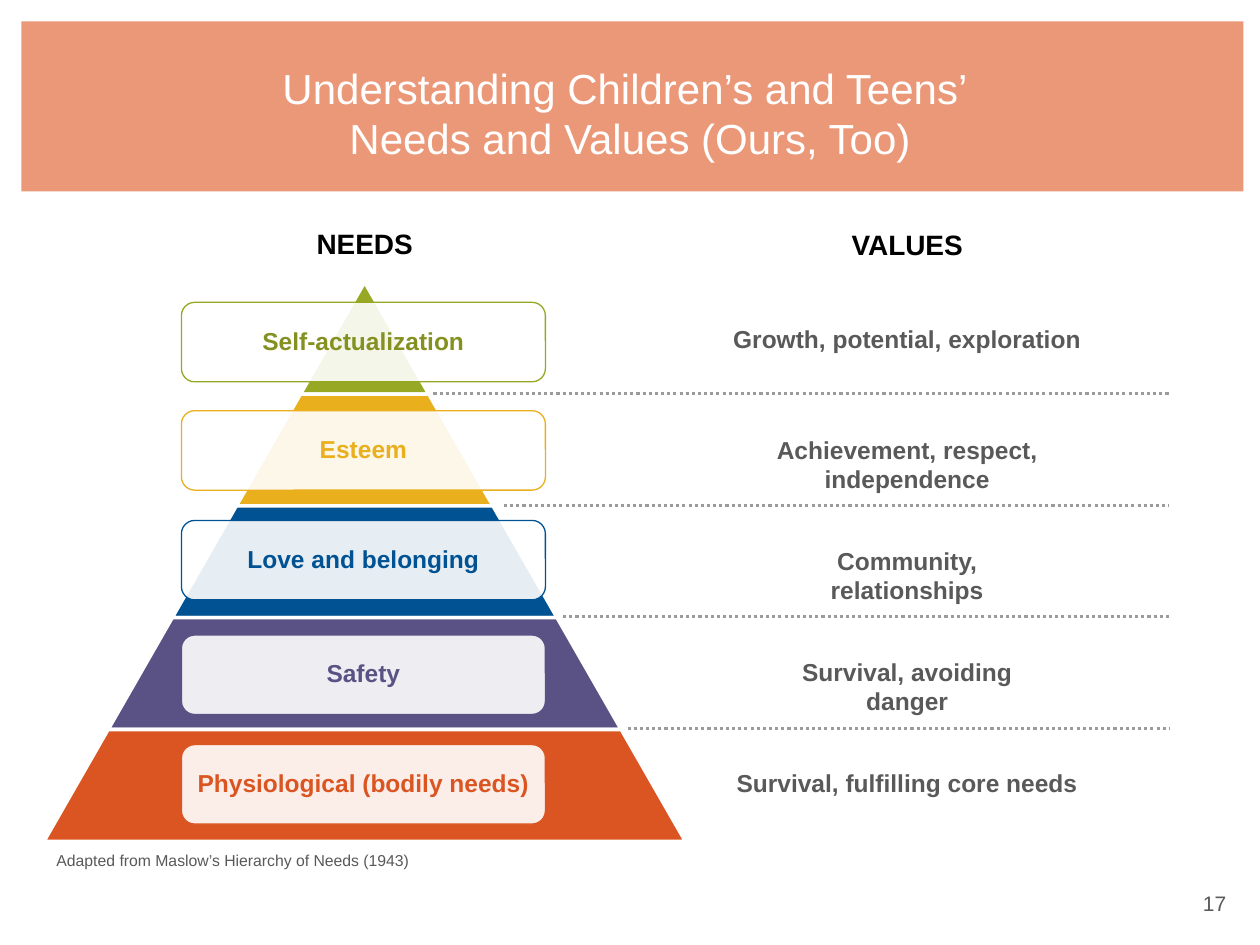
from dataclasses import dataclass

from lxml import etree
from pptx import Presentation
from pptx.dml.color import RGBColor
from pptx.enum import dml, shapes, text
from pptx.oxml import ns
from pptx.util import Pt


@dataclass(frozen=True)
class Theme:
    font: str = "Arial"
    band: str = "EB9878"
    white: str = "FFFFFF"
    black: str = "000000"
    gray: str = "595959"
    rule: str = "9B9B9B"
    title_size: float = 24
    heading_size: float = 16
    body_size: float = 14
    number_size: float = 12
    source_size: float = 9


@dataclass(frozen=True)
class Tier:
    need: str
    value: str
    value_width: float
    label_top: float
    rule_left: float
    fill: str
    outline: str
    ink: str


THEME = Theme()
CENTER = 208.4
VALUE_CENTER = 518.4
PYRAMID_TOP = 161.3
TIER_HEIGHT = 63.9
TIER_WIDTH = 73.3
VALUE_TOP = 181.4
VALUE_PITCH = 63.5
RULE_RIGHT = 668.2

TIERS = [
    Tier("Self-actualization", "Growth, potential, exploration", 216, 172.8, 247.7,
         "97A825", "96A721", "849120"),
    Tier("Esteem", "Achievement, respect, independence", 245, 234.7, 288,
         "E9AF1D", "E9AF1D", "E9AF1D"),
    Tier("Love and belonging", "Community, relationships", 180, 297.4, 321.8,
         "005293", "005293", "005293"),
    Tier("Safety", "Survival, avoiding danger", 180, 362.9, 358.6,
         "5A5284", "5A5284", "5A5284"),
    Tier("Physiological (bodily needs)", "Survival, fulfilling core needs", 216, 425.5, None,
         "DA5521", "DA5521", "DA5521"),
]


class SlideBuilder:
    def __init__(self, deck, theme):
        self.theme = theme
        self.page = deck.slides.add_slide(deck.slide_layouts[5])

    def set_text(self, shape, words, size, color, bold=False, align=text.PP_ALIGN.CENTER):
        frame = shape.text_frame
        frame.word_wrap = True
        frame.text = words
        para = frame.paragraphs[0]
        para.alignment = align
        para.font.name = self.theme.font
        para.font.size = Pt(size)
        para.font.bold = bold
        para.font.color.rgb = RGBColor.from_string(color)
        return frame

    def shape(self, kind, left, top, width, height, fill, outline=None, weight=0):
        shape = self.page.shapes.add_shape(kind, Pt(left), Pt(top), Pt(width), Pt(height))
        shape.shadow.inherit = False
        shape.fill.solid()
        shape.fill.fore_color.rgb = RGBColor.from_string(fill)
        if outline:
            shape.line.color.rgb = RGBColor.from_string(outline)
            shape.line.width = Pt(weight)
        else:
            shape.line.fill.background()
        return shape

    def title(self, words):
        title = self.page.shapes.title
        title.left, title.top, title.width, title.height = Pt(36), Pt(29), Pt(648), Pt(70.6)
        frame = self.set_text(title, words, self.theme.title_size, self.theme.white)
        frame.vertical_anchor = text.MSO_ANCHOR.MIDDLE
        band = self.shape(shapes.MSO_SHAPE.RECTANGLE, 12.2, 12.2, 698.4, 97.2, self.theme.band)
        title.element.addprevious(band.element)

    def text_box(self, words, left, top, width, height, size, color, **style):
        box = self.page.shapes.add_textbox(Pt(left), Pt(top), Pt(width), Pt(height))
        self.set_text(box, words, size, color, **style)

    def heading(self, words, center, top, width):
        self.text_box(words, center - width / 2, top, width, 26.6,
                      self.theme.heading_size, self.theme.black, bold=True)

    def pyramid_tier(self, index, tier):
        width = TIER_WIDTH * (index + 1)
        shape = self.shape(shapes.MSO_SHAPE.TRAPEZOID, CENTER - width / 2,
                           PYRAMID_TOP + index * TIER_HEIGHT, width, TIER_HEIGHT,
                           tier.fill, self.theme.white, 2)
        shape.adjustments[0] = TIER_WIDTH / 2 / TIER_HEIGHT

    def value(self, index, tier):
        self.text_box(tier.value, VALUE_CENTER - tier.value_width / 2,
                      VALUE_TOP + index * VALUE_PITCH, tier.value_width, 24.5,
                      self.theme.body_size, self.theme.gray, bold=True)

    def need(self, tier):
        label = self.shape(shapes.MSO_SHAPE.ROUNDED_RECTANGLE, 103.7, tier.label_top,
                           208, 45.4, self.theme.white, tier.outline, 0.75)
        color = label.element.spPr.find(ns.qn("a:solidFill"))[0]
        etree.SubElement(color, ns.qn("a:alpha"), val="90000")
        frame = self.set_text(label, tier.need, self.theme.body_size, tier.ink, bold=True)
        frame.vertical_anchor = text.MSO_ANCHOR.MIDDLE
        frame.margin_left = frame.margin_right = Pt(6)
        frame.margin_top = frame.margin_bottom = Pt(6)
        frame.paragraphs[0].line_spacing = 0.9

    def dotted_rule(self, left, top):
        rule = self.page.shapes.add_connector(shapes.MSO_CONNECTOR.STRAIGHT,
                                              Pt(left), Pt(top), Pt(RULE_RIGHT), Pt(top))
        rule.line.color.rgb = RGBColor.from_string(self.theme.rule)
        rule.line.width = Pt(1.75)
        rule.line.dash_style = dml.MSO_LINE.ROUND_DOT
        etree.SubElement(rule.element.spPr, ns.qn("a:effectLst"))


def main():
    deck = Presentation()
    deck.slide_width, deck.slide_height = Pt(720), Pt(540)
    slide = SlideBuilder(deck, THEME)
    slide.title("Understanding Children’s and Teens’ \vNeeds and Values (Ours, Too)")
    slide.text_box("17", 540, 505.4, 167.8, 23, THEME.number_size, THEME.gray,
                   align=text.PP_ALIGN.RIGHT)
    for index, tier in enumerate(TIERS):
        slide.pyramid_tier(index, tier)
    slide.text_box("Adapted from Maslow’s Hierarchy of Needs (1943)", 25.2, 482.4, 223.2, 18,
                   THEME.source_size, THEME.gray, align=text.PP_ALIGN.LEFT)
    slide.heading("NEEDS", CENTER, 126, 83.5)
    slide.heading("VALUES", VALUE_CENTER, 126.7, 128.9)
    for index, tier in enumerate(TIERS):
        slide.value(index, tier)
        slide.need(tier)
        if tier.rule_left:
            slide.dotted_rule(tier.rule_left, PYRAMID_TOP + (index + 1) * TIER_HEIGHT - 0.5)
    deck.save("out.pptx")


if __name__ == "__main__":
    main()
